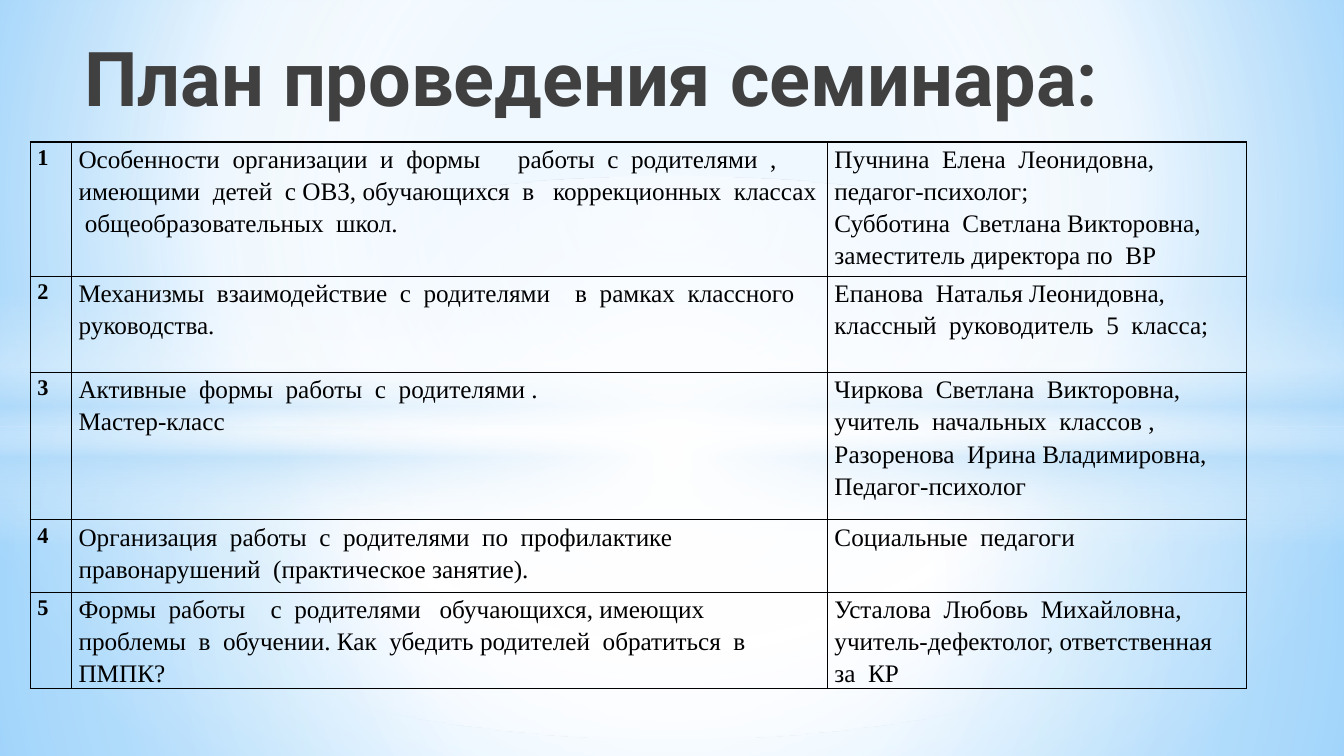
"""Build the seminar plan slide with its five-row table."""
import dataclasses

import lxml.etree
import pptx
import pptx.dml.color
import pptx.enum.shapes
import pptx.enum.text
import pptx.oxml.ns
import pptx.util

Cm = pptx.util.Cm
Pt = pptx.util.Pt
RGB = pptx.dml.color.RGBColor.from_string
qn = pptx.oxml.ns.qn
KIND = pptx.enum.shapes.MSO_SHAPE

TITLE = "План проведения семинара:"
PLAN = [
    (["Особенности  организации  и  формы      работы  с  родителями  , имеющими  детей  с ОВЗ, "
      "обучающихся  в   коррекционных  классах  общеобразовательных  школ."],
     ["Пучнина  Елена  Леонидовна, педагог-психолог;",
      "Субботина  Светлана Викторовна, заместитель директора по  ВР"]),
    (["Механизмы  взаимодействие  с  родителями    в  рамках  классного  руководства."],
     ["Епанова  Наталья Леонидовна, классный  руководитель  5  класса;"]),
    (["Активные  формы  работы  с  родителями .", "Мастер-класс"],
     ["Чиркова  Светлана  Викторовна, учитель  начальных  классов ,",
      "Разоренова  Ирина Владимировна,", "Педагог-психолог"]),
    (["Организация  работы  с  родителями  по  профилактике  правонарушений  (практическое занятие)."],
     ["Социальные  педагоги"]),
    (["Формы  работы    с  родителями   обучающихся, имеющих  проблемы  в  обучении. "
      "Как  убедить родителей  обратиться  в ПМПК?"],
     ["Усталова  Любовь  Михайловна, учитель-дефектолог, ответственная  за  КР"]),
]
COLS = [1.04, 19.05, 10.57]
ROWS = [3.38, 2.42, 3.71, 1.83, 2.42]
WIDE, HIGH = 33.87, 19.05


@dataclasses.dataclass(frozen=True)
class Theme:
    """Colours, fonts and type sizes."""
    ink: str = "000000"
    head: str = "404040"
    white: str = "FFFFFF"
    pale: str = "B4DCFA"
    sky: str = "9ED5FF"
    deep: str = "5BB9FF"
    title: str = "Roboto"
    text: str = "Times New Roman"
    big: int = 54
    body: int = 18
    mark: int = 16


LOOK = Theme()
MID = (50, 50, 50, 50)
BACK = [(0, LOOK.sky, 100), (60, LOOK.white, 100), (100, LOOK.deep, 100)]
GLOWS = [
    (KIND.RECTANGLE, 10.74, 8.31, MID,
     [(0, LOOK.white, 91), (37, LOOK.white, 76), (100, LOOK.pale, 79)]),
    (KIND.RECTANGLE, 0, 10.74, MID,
     [(0, LOOK.white, 89), (48, LOOK.white, 62), (100, LOOK.pale, 79)]),
    (KIND.RECTANGLE, 7.37, 6.35, None,
     [(0, LOOK.white, 0), (29, LOOK.white, 30), (45, LOOK.pale, 40),
      (55, LOOK.white, 26), (65, LOOK.pale, 60), (100, LOOK.white, 0)]),
    (KIND.OVAL, 4.45, 14.17, MID, [(0, LOOK.white, 100), (54, LOOK.white, 0)]),
]


def add(node, tag, **attrs):
    """Append a child element and return it."""
    child = lxml.etree.SubElement(node, qn(tag))
    for key, value in attrs.items():
        child.set(key, str(value))
    return child


def shade(fill, props, stops, focus):
    """Give a fill its gradient: radial about focus, or downward."""
    fill.gradient()
    grad = props.find(qn("a:gradFill"))
    for child in list(grad):
        grad.remove(child)
    row = add(grad, "a:gsLst")
    for pos, tone, alpha in stops:
        stop = add(row, "a:gs", pos=pos * 1000)
        color = add(stop, "a:srgbClr", val=tone)
        if alpha < 100:
            add(color, "a:alpha", val=alpha * 1000)
    if focus:
        ring = add(grad, "a:path", path="circle")
        add(ring, "a:fillToRect", **{side: part * 1000 for side, part in zip("ltrb", focus)})
    else:
        add(grad, "a:lin", ang=5400000, scaled=0)


def style(para, face, size, tone, bold):
    """Set the font of a paragraph."""
    font = para.font
    font.name, font.size, font.bold = face, Pt(size), bold
    font.color.rgb = RGB(tone)


def write(cell, lines, size, bold):
    """Fill a table cell with ruled edges and styled lines."""
    cell.margin_left = cell.margin_right = Cm(0.18)
    cell.margin_top = cell.margin_bottom = 0
    props = cell._tc.get_or_add_tcPr()
    for side in "LRTB":
        edge = add(props, f"a:ln{side}", w=Pt(1))
        add(add(edge, "a:solidFill"), "a:srgbClr", val=LOOK.ink)
    cell.fill.background()
    cell.text = "\n".join(lines)
    for para in cell.text_frame.paragraphs:
        para.line_spacing = 1.15
        style(para, LOOK.text, size, LOOK.ink, bold)


def main():
    """Draw the background, title and table, then save."""
    deck = pptx.Presentation()
    deck.slide_width, deck.slide_height = Cm(WIDE), Cm(HIGH)
    slide = deck.slides.add_slide(deck.slide_layouts[5])
    shapes = slide.shapes
    title = shapes.title

    fill = slide.background.fill
    shade(fill, slide.element.find(".//" + qn("p:bgPr")), BACK, (20, 10, 20, 60))
    for kind, top, high, focus, stops in GLOWS:
        glow = shapes.add_shape(kind, 0, Cm(top), Cm(WIDE), Cm(high))
        glow.shadow.inherit = False
        glow.line.fill.background()
        shade(glow.fill, glow.element.spPr, stops, focus)
        title.element.addprevious(glow.element)

    title.left, title.top, title.width, title.height = Cm(1.37), Cm(0.65), Cm(31.6), Cm(2.29)
    title.text = TITLE
    frame = title.text_frame
    frame.margin_left = Cm(0.76)
    frame.vertical_anchor = pptx.enum.text.MSO_ANCHOR.TOP
    frame.auto_size = pptx.enum.text.MSO_AUTO_SIZE.NONE
    para = frame.paragraphs[0]
    para.alignment = pptx.enum.text.PP_ALIGN.LEFT
    style(para, LOOK.title, LOOK.big, LOOK.head, True)

    table = shapes.add_table(len(ROWS), len(COLS), Cm(0.76), Cm(3.58),
                             Cm(sum(COLS)), Cm(sum(ROWS))).table
    table.first_row = table.horz_banding = False
    for col, wide in zip(table.columns, COLS):
        col.width = Cm(wide)
    for num, (row, high, (topic, host)) in enumerate(zip(table.rows, ROWS, PLAN), 1):
        row.height = Cm(high)
        mark, theme, who = row.cells
        write(mark, [str(num)], LOOK.mark, True)
        write(theme, topic, LOOK.body, False)
        write(who, host, LOOK.body, False)

    deck.save("out.pptx")


if __name__ == "__main__":
    main()
